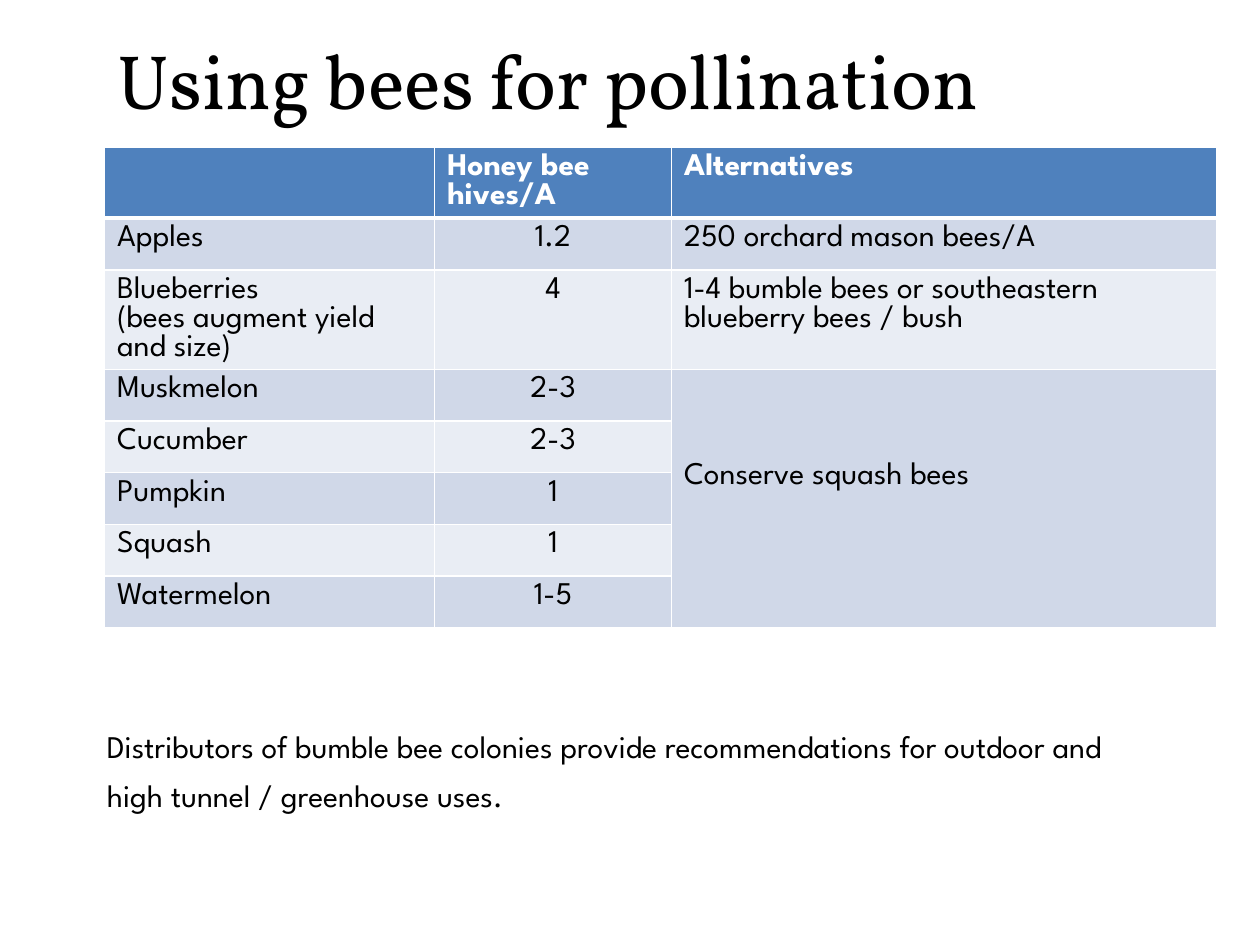
import pptx
import pptx.dml.color
import pptx.enum.text
import pptx.oxml
import pptx.oxml.ns
import pptx.util
from pptx.util import Inches

TITLE_FONT = "Vollkorn"
BODY_FONT = "League Spartan"
HEADER_FILL = "4F81BD"
BAND_FILLS = ["D0D8E8", "E9EDF4"]
ALIGN = pptx.enum.text.PP_ALIGN
ANCHOR = pptx.enum.text.MSO_ANCHOR

HEADINGS = ["", "Honey bee hives/A", "Alternatives"]
CROPS = [
    ["Apples", "1.2", "250 orchard mason bees/A"],
    ["Blueberries\n(bees augment yield and size)", "4",
     "1-4 bumble bees or southeastern blueberry bees / bush"],
    ["Muskmelon", "2-3", "Conserve squash bees"],
    ["Cucumber", "2-3", ""],
    ["Pumpkin", "1", ""],
    ["Squash", "1", ""],
    ["Watermelon", "1-5", ""],
]
FIRST_SQUASH_ROW = 3
COLUMN_WIDTHS = [2.62, 1.88, 4.33]
ROW_HEIGHT = 0.41


def color(hex_code):
    return pptx.dml.color.RGBColor.from_string(hex_code)


def write(frame, text, font=BODY_FONT, size=18, ink="000000", bold=False,
          align=ALIGN.LEFT, spacing=None):
    """Fill a text frame, one paragraph per line of text."""
    frame.word_wrap = True
    frame.text = text
    for paragraph in frame.paragraphs:
        paragraph.alignment = align
        if spacing:
            paragraph.line_spacing = spacing
        for holder in [paragraph, *paragraph.runs]:
            holder.font.name = font
            holder.font.size = pptx.util.Pt(size)
            holder.font.bold = bold
            holder.font.color.rgb = color(ink)


def add_borders(cell, top=1, bottom=1):
    """Draw white cell borders; widths are in points."""
    properties = cell._tc.get_or_add_tcPr()
    for side, width in {"L": 1, "R": 1, "T": top, "B": bottom}.items():
        properties.append(pptx.oxml.parse_xml(
            f'<a:ln{side} {pptx.oxml.ns.nsdecls("a")} w="{pptx.util.Pt(width)}">'
            '<a:solidFill><a:srgbClr val="FFFFFF"/></a:solidFill>'
            f'</a:ln{side}>'))


def add_title(slide, text):
    title = slide.shapes.title
    title.left, title.top = Inches(0.83), Inches(0)
    title.width, title.height = Inches(8.83), Inches(1.25)
    title.text_frame.vertical_anchor = ANCHOR.MIDDLE
    write(title.text_frame, text, font=TITLE_FONT, size=44)


def add_pollination_table(slide):
    rows = [HEADINGS, *CROPS]
    table = slide.shapes.add_table(
        len(rows), len(HEADINGS), Inches(0.83), Inches(1.17),
        Inches(sum(COLUMN_WIDTHS)), Inches(ROW_HEIGHT * len(rows))).table
    for column, width in zip(table.columns, COLUMN_WIDTHS):
        column.width = Inches(width)

    for r, entries in enumerate(rows):
        is_header = r == 0
        for c, entry in enumerate(entries):
            cell = table.cell(r, c)
            # A heavier rule separates the headings from the crops
            add_borders(cell, top=3 if r == 1 else 1, bottom=3 if is_header else 1)
            cell.fill.solid()
            cell.fill.fore_color.rgb = color(
                HEADER_FILL if is_header else BAND_FILLS[(r - 1) % 2])
            centered = c == 1 and not is_header
            write(cell.text_frame, entry, bold=is_header,
                  ink="FFFFFF" if is_header else "000000",
                  align=ALIGN.CENTER if centered else ALIGN.LEFT)

    # One alternative covers all the squash-family crops
    squash_bees = table.cell(FIRST_SQUASH_ROW, 2)
    squash_bees.merge(table.cell(len(rows) - 1, 2))
    squash_bees.margin_top = Inches(0.74)


def add_note(slide, text):
    note = slide.shapes.add_textbox(
        Inches(0.75), Inches(5.63), Inches(8.58), Inches(0.71))
    write(note.text_frame, text, spacing=1.3)


def main():
    deck = pptx.Presentation()
    deck.slide_width, deck.slide_height = Inches(10), Inches(7.5)
    slide = deck.slides.add_slide(deck.slide_layouts.get_by_name("Title Only"))
    add_title(slide, "Using bees for pollination")
    add_pollination_table(slide)
    add_note(slide, "Distributors of bumble bee colonies provide recommendations "
                    "for outdoor and high tunnel / greenhouse uses.")
    deck.save("out.pptx")


if __name__ == "__main__":
    main()
